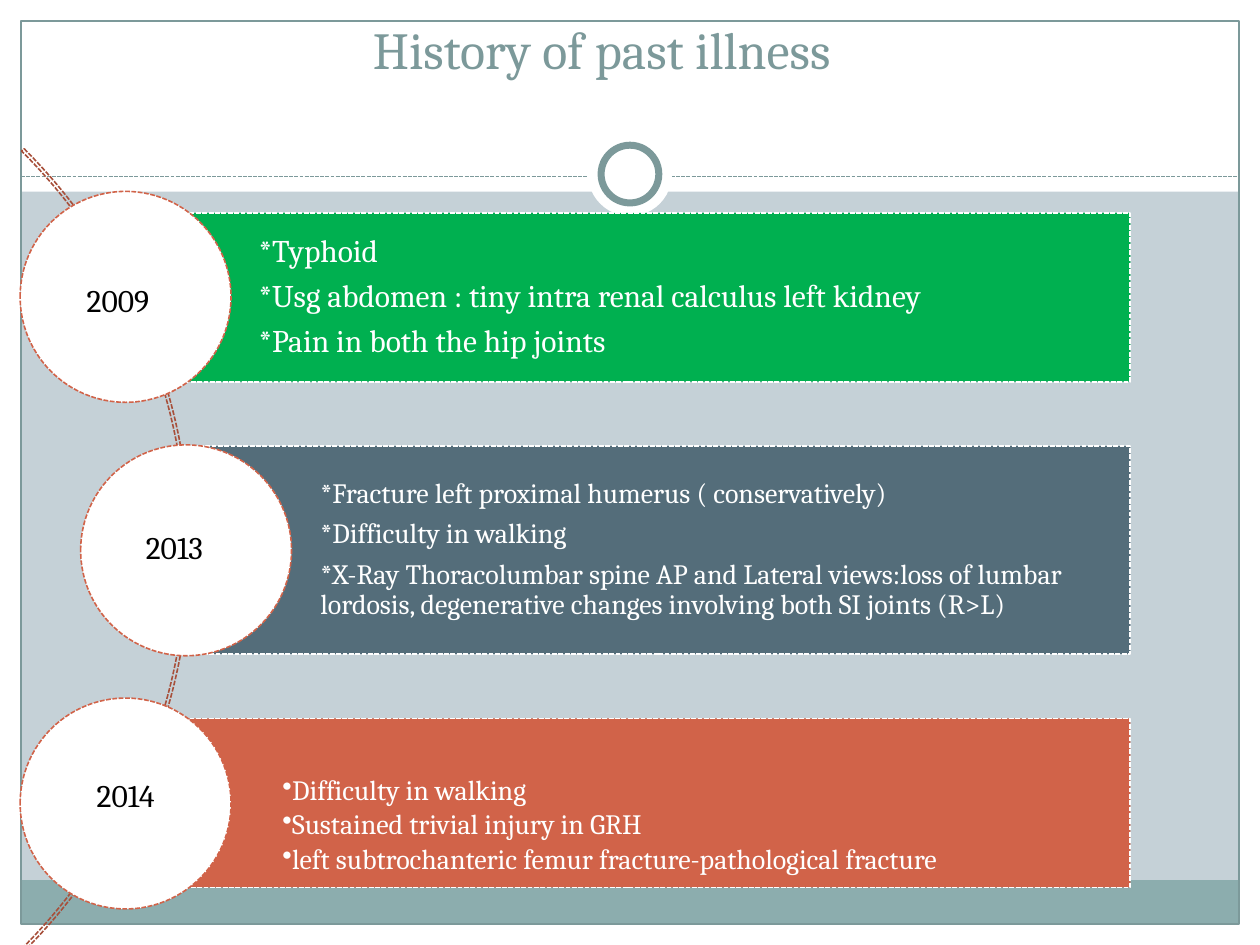
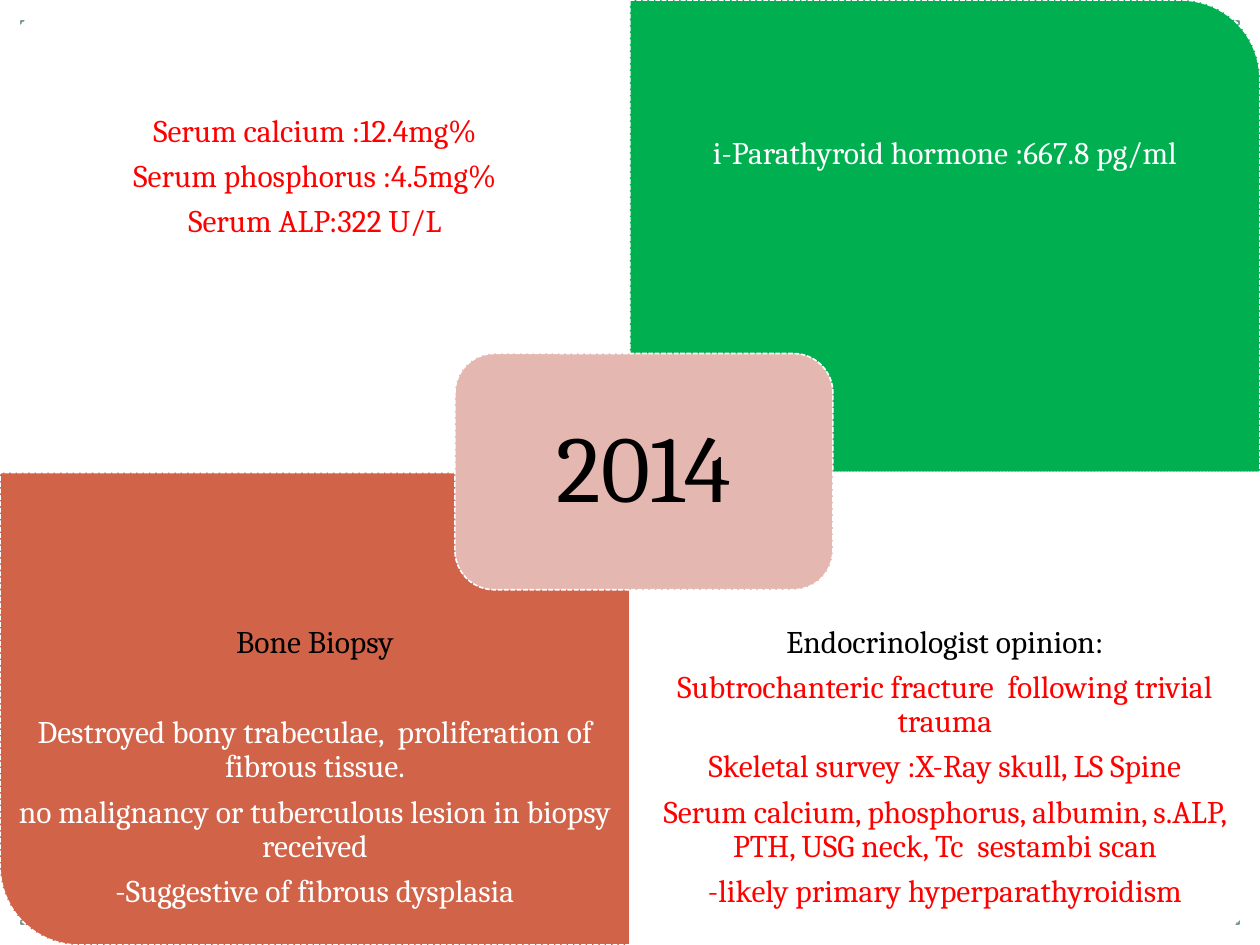
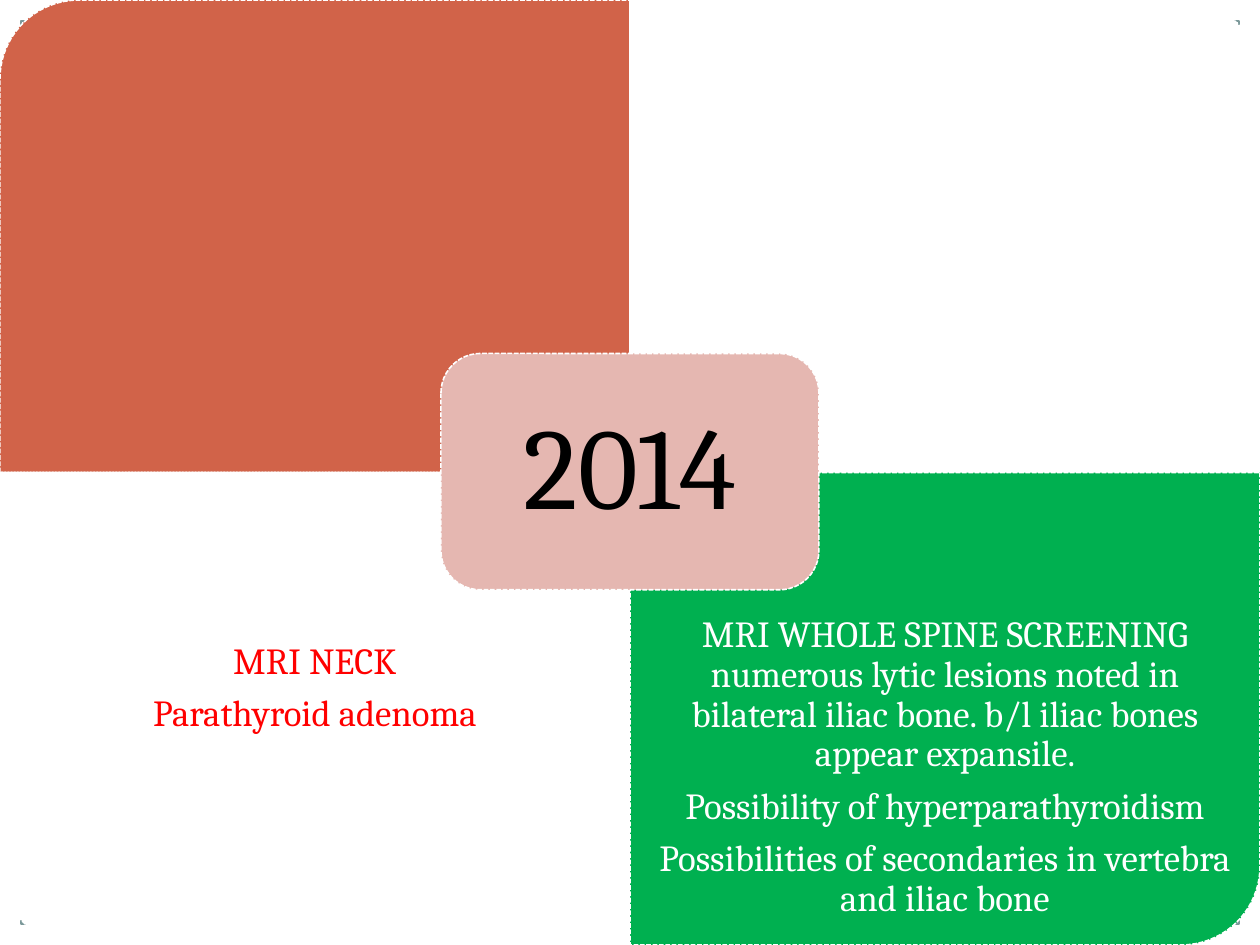
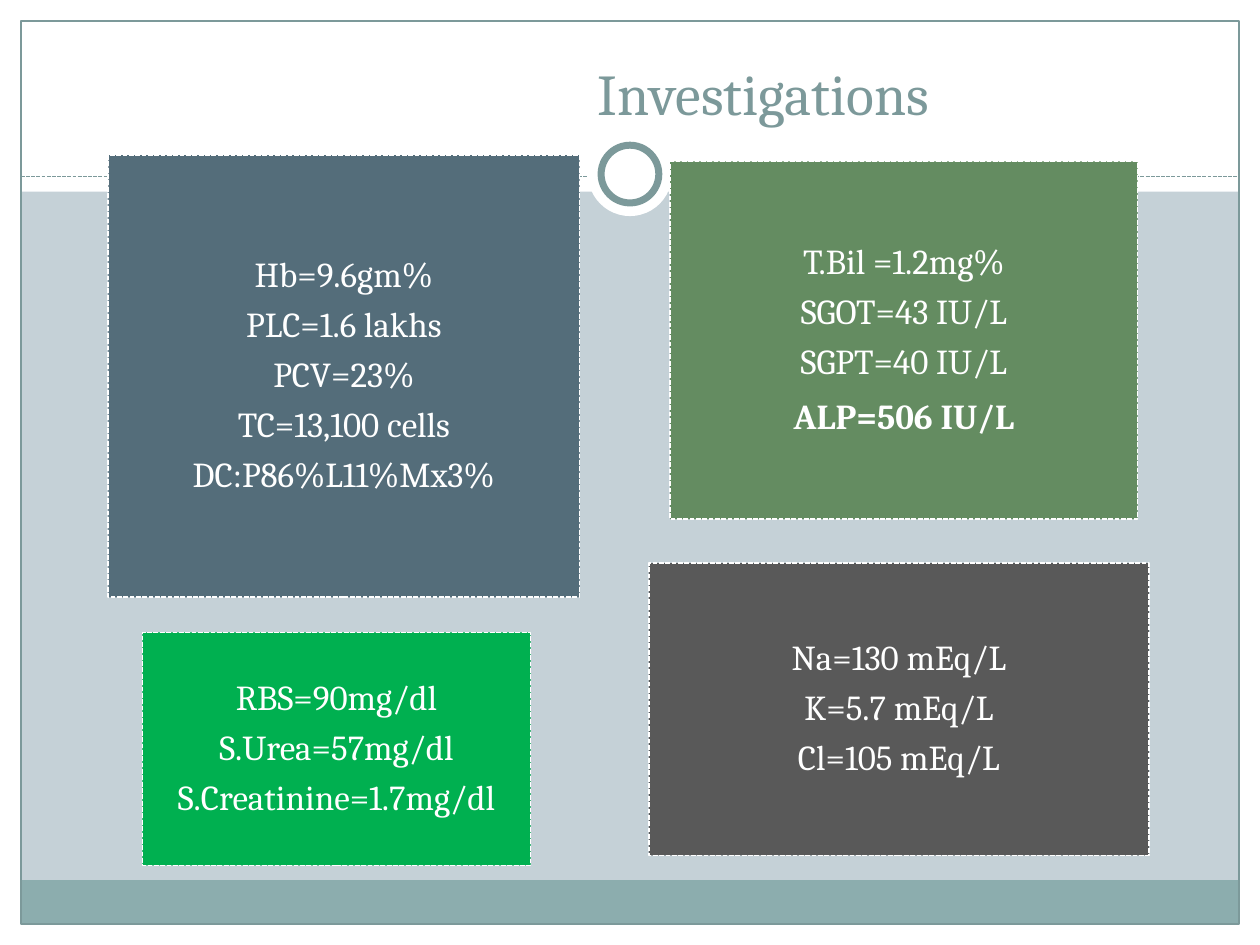
from dataclasses import dataclass
from typing import Any, Optional

from pptx import Presentation, util as u
from pptx.dml import color as dml_color
from pptx.enum import dml, shapes, text
from pptx.oxml import xmlchemy

COLORS = {
    "white": "FFFFFF",
    "black": "000000",
    "red": "FF0000",
    "green": "00B050",
    "rust": "D16349",
    "arc": "A74F3A",
    "slate": "546D7A",
    "sage": "648C61",
    "gray": "595959",
    "rose": "E5B7B1",
    "accent": "7C999A",
    "band": "8CADAE",
    "background": "C5D1D7",
}
FONT = "Cambria"
SLIDE_WIDTH, SLIDE_HEIGHT = 720, 540
EDGE = 12
TITLE_ONLY, BLANK = 5, 6
DASH = dml.MSO_LINE.SQUARE_DOT
KIND = shapes.MSO_SHAPE
CENTER, LEFT = text.PP_ALIGN.CENTER, text.PP_ALIGN.LEFT
MIDDLE, TOP, BOTTOM = text.MSO_ANCHOR.MIDDLE, text.MSO_ANCHOR.TOP, text.MSO_ANCHOR.BOTTOM

Box = tuple[float, float, float, float]


@dataclass(frozen=True)
class Line:
    color: str
    width: float = 0.9
    dash: Optional[Any] = DASH


@dataclass(frozen=True)
class Block:
    lines: tuple[str, ...]
    size: float
    color: str = "white"
    insets: Box = (7.2, 3.6, 7.2, 3.6)
    align: Any = CENTER
    anchor: Any = MIDDLE
    spacing: float = 0.9
    after: float = 0.35
    bullet_indent: float = 0
    wrap: bool = True
    heading_color: Optional[str] = None
    heading_after: Optional[float] = None
    bold_last: bool = False


@dataclass(frozen=True)
class Panel:
    kind: Any
    box: Box
    fill: Optional[str] = None
    line: Optional[Line] = None
    block: Optional[Block] = None
    rotation: float = 0
    adjustments: tuple[float, ...] = ()


@dataclass(frozen=True)
class Event:
    box: Box
    fill: str
    circle: tuple[float, float]
    year: str
    label: tuple[float, float]
    block: Block


WHITE_DASH = Line("white")


def even(inset: float, bottom: Optional[float] = None) -> Box:
    return inset, inset, inset, inset if bottom is None else bottom


def apply(target: Any, values: dict[str, Any]) -> None:
    for name, value in values.items():
        setattr(target, name, value)


def rgb(name: str) -> dml_color.RGBColor:
    return dml_color.RGBColor.from_string(COLORS[name])


def points(values: Box) -> list[u.Length]:
    return [u.Pt(value) for value in values]


def style_line(target: Any, line: Line) -> None:
    target.color.rgb = rgb(line.color)
    apply(target, {"width": u.Pt(line.width), "dash_style": line.dash})


def add_bullet(paragraph: Any, indent: float) -> None:
    properties = paragraph._p.get_or_add_pPr()
    properties.set("marL", str(u.Pt(indent)))
    properties.set("indent", "0")
    bullet = xmlchemy.OxmlElement("a:buChar")
    bullet.set("char", "•")
    properties.append(bullet)


def write(shape: Any, block: Block) -> None:
    frame = shape.text_frame
    sides = ("margin_left", "margin_top", "margin_right", "margin_bottom")
    apply(frame, dict(zip(sides, points(block.insets))))
    apply(frame, {
        "word_wrap": block.wrap,
        "auto_size": text.MSO_AUTO_SIZE.NONE if block.wrap else text.MSO_AUTO_SIZE.SHAPE_TO_FIT_TEXT,
        "vertical_anchor": block.anchor,
    })
    for index, content in enumerate(block.lines):
        paragraph = frame.add_paragraph() if index else frame.paragraphs[0]
        first, last = index == 0, index == len(block.lines) - 1
        strong = block.bold_last and last
        after = block.after * block.size
        if first and block.heading_after is not None:
            after = block.heading_after
        apply(paragraph, {
            "alignment": block.align,
            "line_spacing": 1.0 if strong else block.spacing,
            "space_before": u.Pt(0),
            "space_after": u.Pt(0 if strong else after),
        })
        if block.bullet_indent:
            add_bullet(paragraph, block.bullet_indent)
        run = paragraph.add_run()
        run.text = content
        apply(run.font, {"name": FONT, "size": u.Pt(block.size), "bold": strong})
        run.font.color.rgb = rgb(block.heading_color if first and block.heading_color else block.color)


def add_panel(slide: Any, panel: Panel) -> Any:
    shape = slide.shapes.add_shape(panel.kind, *points(panel.box))
    shape.shadow.inherit = False
    shape.rotation = panel.rotation
    for index, value in enumerate(panel.adjustments):
        shape.adjustments[index] = value
    if panel.fill:
        shape.fill.solid()
        shape.fill.fore_color.rgb = rgb(panel.fill)
    else:
        shape.fill.background()
    if panel.line:
        style_line(shape.line, panel.line)
    else:
        shape.line.fill.background()
    if panel.block:
        write(shape, panel.block)
    return shape


def add_text(slide: Any, box: Box, block: Block) -> None:
    write(slide.shapes.add_textbox(*points(box)), block)


def add_title(slide: Any, content: str, box: Box, size: float) -> None:
    title = slide.shapes.title
    apply(title, dict(zip(("left", "top", "width", "height"), points(box))))
    write(title, Block((content,), size, "accent", anchor=BOTTOM, spacing=1.0, after=0))


def build_master(presentation: Any, slide: Any) -> None:
    master = presentation.slide_master
    master.background.fill.solid()
    master.background.fill.fore_color.rgb = rgb("background")
    inner_width = SLIDE_WIDTH - 2 * EDGE
    inner_height = SLIDE_HEIGHT - 2 * EDGE
    rule_y = 100.8
    bands = [
        (0, SLIDE_HEIGHT - EDGE, SLIDE_WIDTH, EDGE),
        (0, 0, SLIDE_WIDTH, 109.5),
        (0, 0, EDGE, SLIDE_HEIGHT),
        (SLIDE_WIDTH - EDGE, 0, EDGE, SLIDE_HEIGHT),
    ]
    panels = [Panel(KIND.RECTANGLE, band, "white") for band in bands]
    panels += [
        Panel(KIND.RECTANGLE, (EDGE, 503, inner_width, 25), "band"),
        Panel(KIND.RECTANGLE, (EDGE, EDGE, inner_width, inner_height), line=Line("accent", 0.75, None)),
    ]
    parts = [add_panel(slide, panel) for panel in panels]
    rule = slide.shapes.add_connector(
        shapes.MSO_CONNECTOR.STRAIGHT, *points((EDGE, rule_y, SLIDE_WIDTH - EDGE, rule_y)))
    style_line(rule.line, Line("accent", 0.75))
    rule._element.spPr.append(xmlchemy.OxmlElement("a:effectLst"))
    parts.append(rule)
    rings = [
        Panel(KIND.OVAL, (336, 75.5, 48, 48), "white"),
        Panel(KIND.OVAL, (343.5, 83, 33, 33), "white", Line("accent", 4, None)),
    ]
    parts += [add_panel(slide, ring) for ring in rings]
    tree = master.shapes._spTree
    for index, part in enumerate(parts):
        part._element.xpath(".//p:cNvPr")[0].set("id", str(100 + index))
        tree.insert(2 + index, part._element)


def build_history(slide: Any) -> None:
    add_title(slide, "History of past illness", (20, 6.5, 648, 43), 29.7)
    add_panel(slide, Panel(KIND.BLOCK_ARC, (-540, -10.1, 648.7, 648.7), line=Line("arc"),
                           adjustments=(189, 27, 0.003)))
    diameter = 120.5
    events = [
        Event((71.3, 121.7, 574.6, 96.5), "green", (11.5, 109.4), "2009", (42.5, 157),
              Block(("*Typhoid",
                     "*Usg abdomen : tiny intra renal calculus left kidney",
                     "*Pain in both the hip joints"),
                    18, insets=(76.5, 3.6, 3.6, 3.6), align=LEFT)),
        Event((106.6, 254.9, 539.3, 118.8), "slate", (46.1, 254.2), "2013", (76.3, 298.1),
              Block(("*Fracture left proximal humerus ( conservatively)",
                     "*Difficulty in walking",
                     "*X-Ray Thoracolumbar spine AP and Lateral views:loss of lumbar lordosis, "
                     "degenerative changes involving both SI joints (R>L)"),
                    16, insets=(76.5, 2.9, 2.9, 2.9), align=LEFT)),
        Event((71.3, 410.6, 574.6, 96.5), "rust", (11.5, 398.9), "2014", (48.2, 439.9),
              Block(("Difficulty in walking",
                     "Sustained trivial injury in GRH",
                     "left subtrochanteric femur fracture-pathological fracture"),
                    16, insets=(76.5, 33, 4.3, 4.3), align=LEFT, anchor=TOP,
                    after=0.15, bullet_indent=13.5)),
    ]
    for event in events:
        add_panel(slide, Panel(KIND.RECTANGLE, event.box, event.fill, WHITE_DASH, event.block))
        add_panel(slide, Panel(KIND.OVAL, (*event.circle, diameter, diameter), "white", Line("rust")))
    for event in events:
        add_text(slide, (*event.label, 52.5, 29),
                 Block((event.year,), 18, "black", align=LEFT, anchor=TOP,
                       spacing=1.0, after=0, wrap=False))


def build_matrix(slide: Any, fills: tuple[str, ...], blocks: tuple[Optional[Block], ...],
                 hub_left: float, hub_size: float) -> None:
    width, height = SLIDE_WIDTH / 2, SLIDE_HEIGHT / 2
    text_height = height * 0.75
    rotations = (270, 0, 180, 90)
    for index, (fill, block, rotation) in enumerate(zip(fills, blocks, rotations)):
        row, column = divmod(index, 2)
        left, top = column * width, row * height
        box = (left, top, width, height)
        if rotation % 180:
            shift = (width - height) / 2
            box = (left + shift, top - shift, height, width)
        add_panel(slide, Panel(KIND.ROUND_1_RECTANGLE, box, fill, WHITE_DASH, rotation=rotation))
        if block:
            text_top = top + row * (height - text_height)
            add_text(slide, (left, text_top, width, text_height), block)
    add_panel(slide, Panel(KIND.ROUNDED_RECTANGLE, (hub_left, 202, 216, 135), "rose", WHITE_DASH,
                           Block(("2014",), hub_size, "black", even(16))))


def build_findings(slide: Any) -> None:
    blocks = (
        Block(("Serum calcium :12.4mg%", "Serum phosphorus :4.5mg%", "Serum ALP:322 U/L"),
              18, "red", even(10)),
        Block(("i-Parathyroid hormone :667.8 pg/ml",), 18, insets=even(10, 36)),
        Block(("Bone Biopsy",
               "Destroyed bony trabeculae,  proliferation of fibrous tissue.",
               "no malignancy or tuberculous lesion in biopsy received",
               "-Suggestive of fibrous dysplasia"),
              18, insets=even(10), heading_color="black", heading_after=32),
        Block(("Endocrinologist opinion:",
               "Subtrochanteric fracture  following trivial trauma",
               "Skeletal survey :X-Ray skull, LS Spine",
               "Serum calcium, phosphorus, albumin, s.ALP, PTH, USG neck, Tc  sestambi scan",
               "-likely primary hyperparathyroidism"),
              18, "red", even(10), heading_color="black"),
    )
    build_matrix(slide, ("white", "green", "rust", "white"), blocks, 260, 54)


def build_imaging(slide: Any) -> None:
    blocks = (
        None,
        None,
        Block(("MRI NECK", "Parathyroid adenoma"), 21, "red", even(11.5, 102)),
        Block(("MRI WHOLE SPINE SCREENING numerous lytic lesions noted in bilateral iliac bone. "
               "b/l iliac bones appear expansile.",
               "Possibility of hyperparathyroidism",
               "Possibilities of secondaries in vertebra and iliac bone"),
              21, insets=even(11.5)),
    )
    build_matrix(slide, ("rust", "white", "white", "green"), blocks, 252, 66)


def build_investigations(slide: Any) -> None:
    add_title(slide, "Investigations ", (116, -13.7, 648, 90), 33)
    insets = even(5.5)
    results = [
        ((61.9, 88.6, 269.3, 252.7), "slate",
         Block(("Hb=9.6gm%", "PLC=1.6 lakhs", "PCV=23%", "TC=13,100 cells", "DC:P86%L11%Mx3%"),
               20, insets=insets)),
        ((383, 92.2, 267.1, 204.5), "sage",
         Block(("T.Bil =1.2mg%", "SGOT=43 IU/L", "SGPT=40 IU/L", "ALP=506 IU/L"),
               20, insets=insets, bold_last=True)),
        ((81.4, 361.4, 221.8, 133.2), "green",
         Block(("RBS=90mg/dl", "S.Urea=57mg/dl", "S.Creatinine=1.7mg/dl"), 20, insets=insets)),
        ((370.8, 321.8, 285.8, 167), "gray",
         Block(("Na=130 mEq/L", "K=5.7 mEq/L", "Cl=105 mEq/L"), 20, insets=insets)),
    ]
    for box, fill, block in results:
        add_panel(slide, Panel(KIND.RECTANGLE, box, fill, WHITE_DASH, block))


def main() -> None:
    presentation = Presentation()
    apply(presentation, {"slide_width": u.Pt(SLIDE_WIDTH), "slide_height": u.Pt(SLIDE_HEIGHT)})
    pages = [
        (TITLE_ONLY, build_history),
        (BLANK, build_findings),
        (BLANK, build_imaging),
        (TITLE_ONLY, build_investigations),
    ]
    for index, (layout, build) in enumerate(pages):
        slide = presentation.slides.add_slide(presentation.slide_layouts[layout])
        if index == 0:
            build_master(presentation, slide)
        build(slide)
    presentation.save("out.pptx")


if __name__ == "__main__":
    main()
